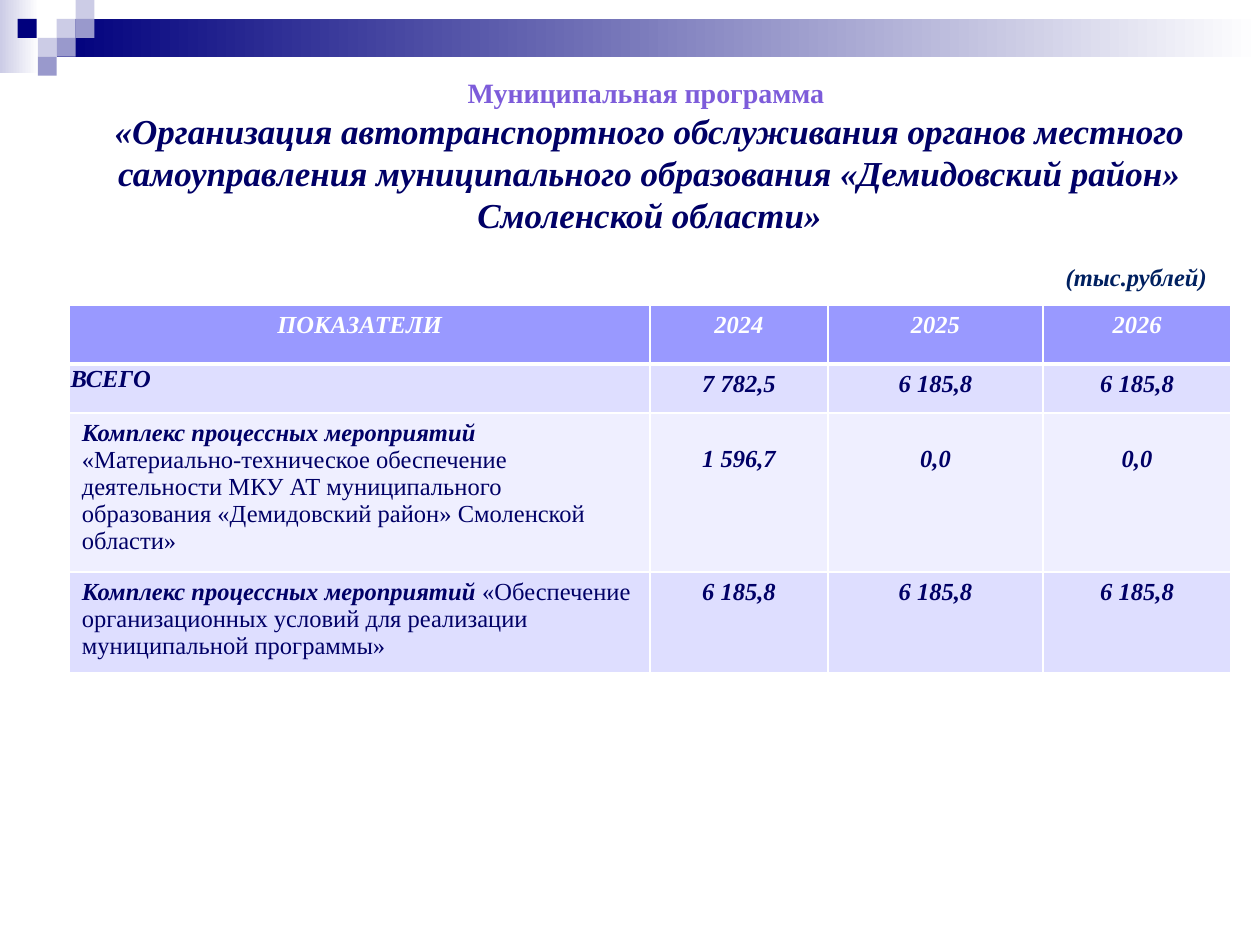
import pptx
import pptx.util
import pptx.dml.color
import pptx.enum.shapes
import pptx.enum.text
import pptx.oxml
from lxml import etree
from pptx.util import Inches

FONT = "Times New Roman"
NAVY = "000066"
ALIGN = pptx.enum.text.PP_ALIGN


def color(value):
    return pptx.dml.color.RGBColor.from_string(value)


def format_run(run, size, value, bold=True, italic=True):
    run.font.name = FONT
    run.font.size = pptx.util.Pt(size)
    run.font.bold = bold
    run.font.italic = italic
    run.font.color.rgb = color(value)


presentation = pptx.Presentation()
presentation.slide_width = Inches(10)
presentation.slide_height = Inches(7.5)
slide = presentation.slides.add_slide(presentation.slide_layouts[5])

# Header decoration: two gradient bars, then the small squares
decoration = [
    (0, 0, 0.31, 0.58, ("CCCCE6", "FFFFFF")),
    (0.45, 0.15, 9.55, 0.3, ("00007D", "FFFFFF")),
]
squares = [
    (0.45, 0.15, "CCCCE6"), (0.6, 0, "CCCCE6"), (0.6, 0.15, "9999CC"),
    (0.3, 0.3, "CCCCE6"), (0.14, 0.15, "00007D"), (0.45, 0.3, "9999CC"),
    (0.3, 0.45, "9999CC"),
]
decoration += [(left, top, 0.15, 0.15, (fill,)) for left, top, fill in squares]
for left, top, width, height, fills in decoration:
    shape = slide.shapes.add_shape(
        pptx.enum.shapes.MSO_SHAPE.RECTANGLE,
        Inches(left), Inches(top), Inches(width), Inches(height))
    shape.shadow.inherit = False
    shape.line.fill.background()
    if len(fills) == 1:
        shape.fill.solid()
        shape.fill.fore_color.rgb = color(fills[0])
    else:
        shape.fill.gradient()
        shape.fill.gradient_angle = 0
        for stop, position, value in zip(shape.fill.gradient_stops, (0, 1), fills):
            stop.position = position
            stop.color.rgb = color(value)

# Title
title = slide.shapes.title
title.left, title.top = Inches(0.31), Inches(0.55)
title.width, title.height = Inches(9.69), Inches(1.72)
title.text_frame.text = (
    "Муниципальная программа \n"
    "«Организация автотранспортного обслуживания органов местного "
    "самоуправления муниципального образования «Демидовский район» "
    "Смоленской области»")
title.text_frame.word_wrap = True
title.text_frame.auto_size = pptx.enum.text.MSO_AUTO_SIZE.NONE
title.text_frame.vertical_anchor = pptx.enum.text.MSO_ANCHOR.TOP
for paragraph, size, value, italic in zip(
        title.text_frame.paragraphs, (16, 20), ("7D5CDA", NAVY), (False, True)):
    paragraph.alignment = ALIGN.CENTER
    format_run(paragraph.runs[0], size, value, italic=italic)

# Table: each cell holds a bold italic part and, optionally, a plain part
measure = "Комплекс процессных мероприятий "
rows = [
    [("ПОКАЗАТЕЛИ",), ("2024",), ("2025",), ("2026",)],
    [("ВСЕГО",), ("7 782,5",), ("6 185,8",), ("6 185,8",)],
    [(measure, "«Материально-техническое обеспечение деятельности МКУ АТ "
               "муниципального образования «Демидовский район» Смоленской области»"),
     ("1 596,7",), ("0,0",), ("0,0",)],
    [(measure, "«Обеспечение организационных условий для реализации "
               "муниципальной программы»"),
     ("6 185,8",), ("6 185,8",), ("6 185,8",)],
]
row_fills = ["9999FF", "DEDEFF", "EFEFFF", "DEDEFF"]
column_widths = [4.61, 1.41, 1.71, 1.49]
row_heights = [0.47, 0.39, 1.26, 0.8]
table = slide.shapes.add_table(
    len(rows), len(column_widths), Inches(0.55), Inches(2.42),
    Inches(sum(column_widths)), Inches(sum(row_heights))).table
for column, width in zip(table.columns, column_widths):
    column.width = Inches(width)
for row, height in zip(table.rows, row_heights):
    row.height = Inches(height)

for row_index, row in enumerate(rows):
    for column_index, parts in enumerate(row):
        cell = table.cell(row_index, column_index)
        paragraph = cell.text_frame.paragraphs[0]
        if row_index == 0 or column_index > 0:
            paragraph.alignment = ALIGN.CENTER
        for part_index, part in enumerate(parts):
            run = paragraph.add_run()
            run.text = part
            emphasis = part_index == 0
            format_run(run, 14, NAVY if row_index else "FFFFFF", emphasis, emphasis)

        # White borders, thicker around the line below the header
        properties = cell._tc.get_or_add_tcPr()
        for side in "LRTB":
            thick = (row_index, side) in ((0, "B"), (1, "T"))
            line = etree.SubElement(
                properties, pptx.oxml.ns.qn("a:ln" + side),
                w=str(pptx.util.Pt(3 if thick else 1)))
            fill = etree.SubElement(line, pptx.oxml.ns.qn("a:solidFill"))
            etree.SubElement(fill, pptx.oxml.ns.qn("a:srgbClr"), val="FFFFFF")
        cell.fill.solid()
        cell.fill.fore_color.rgb = color(row_fills[row_index])

# The total label sits tight in its corner; the first measure's values sit a line lower
total = table.cell(1, 0)
total.margin_left = total.margin_right = total.margin_top = Inches(0.01)
total.margin_bottom = 0
for column_index in range(1, len(column_widths)):
    table.cell(2, column_index).margin_top = Inches(0.26)

# Unit note
unit_note = slide.shapes.add_textbox(Inches(8.36), Inches(2.03), Inches(1.33), Inches(0.34))
unit_note.text_frame.text = "(тыс.рублей)"
unit_note.text_frame.word_wrap = False
format_run(unit_note.text_frame.paragraphs[0].runs[0], 14, "002060")

presentation.save("out.pptx")
